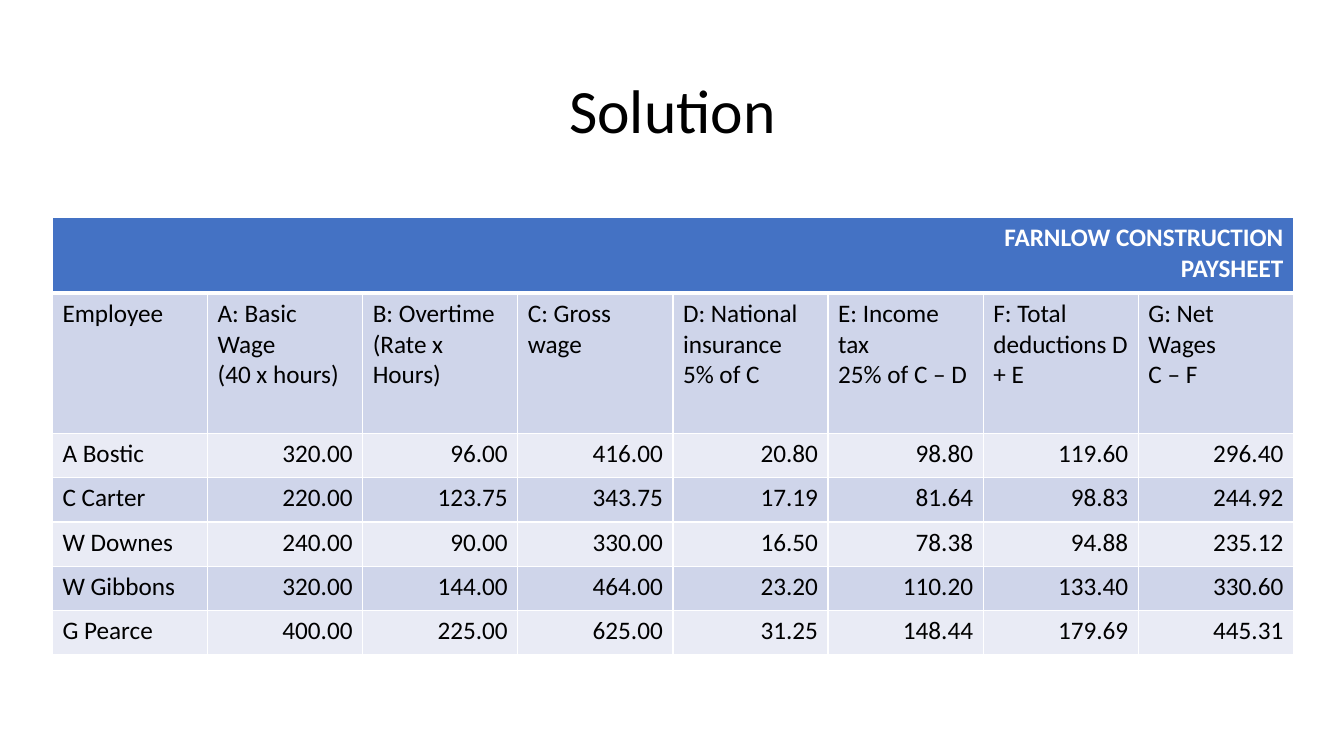
from pptx import Presentation
from pptx.dml.color import RGBColor
from pptx.enum.text import MSO_ANCHOR, PP_ALIGN
from pptx.oxml import parse_xml
from pptx.oxml.ns import nsdecls
from pptx.util import Inches, Pt

FONT = "Calibri"
BLACK, WHITE, BLUE = "000000", "FFFFFF", "4472C4"
BANDS = ["CFD5EA", "E9EBF5"]
COLUMN_WIDTH = 12.31 / 8
ROW_HEIGHTS = [0.75, 1.39] + [0.44] * 5
COMPANY = "FARNLOW CONSTRUCTION\nPAYSHEET"
HEADINGS = [
    "Employee",
    "A: Basic Wage\n(40 x hours)",
    "B: Overtime (Rate x Hours)",
    "C: Gross wage",
    "D: National insurance 5% of C",
    "E: Income tax\n25% of C – D",
    "F: Total deductions D + E",
    "G: Net Wages\nC – F",
]
PAY = [
    ("A Bostic", 320, 96, 416, 20.80, 98.80, 119.60, 296.40),
    ("C Carter", 220, 123.75, 343.75, 17.19, 81.64, 98.83, 244.92),
    ("W Downes", 240, 90, 330, 16.50, 78.38, 94.88, 235.12),
    ("W Gibbons", 320, 144, 464, 23.20, 110.20, 133.40, 330.60),
    ("G Pearce", 400, 225, 625, 31.25, 148.44, 179.69, 445.31),
]


def color(value):
    return RGBColor.from_string(value)


def write_text(frame, text, size=18, fill=BLACK, bold=False,
               align=PP_ALIGN.LEFT, line_spacing=1.0):
    frame.text = text
    for paragraph in frame.paragraphs:
        paragraph.alignment = align
        paragraph.line_spacing = line_spacing
        for run in paragraph.runs:
            run.font.name = FONT
            run.font.size = Pt(size)
            run.font.bold = bold
            run.font.color.rgb = color(fill)


def set_borders(cell, bottom=1):
    properties = cell._tc.get_or_add_tcPr()
    widths = {"lnL": 1, "lnR": 1, "lnT": 1, "lnB": bottom}
    for position, (side, width) in enumerate(widths.items()):
        properties.insert(position, parse_xml(
            f'<a:{side} {nsdecls("a")} w="{Pt(width)}"><a:solidFill>'
            f'<a:srgbClr val="{WHITE}"/></a:solidFill></a:{side}>'))


def fill_cell(cell, text, background, bottom=1, **text_format):
    cell.fill.solid()
    cell.fill.fore_color.rgb = color(background)
    set_borders(cell, bottom)
    write_text(cell.text_frame, text, **text_format)


def add_title(slide, text):
    title = slide.shapes.title
    title.left, title.top = Inches(0.92), Inches(0.4)
    title.width, title.height = Inches(11.5), Inches(1.45)
    title.text_frame.vertical_anchor = MSO_ANCHOR.MIDDLE
    write_text(title.text_frame, text, size=44, align=PP_ALIGN.CENTER,
               line_spacing=0.9)


def add_paysheet(slide):
    table = slide.shapes.add_table(
        len(ROW_HEIGHTS), len(HEADINGS), Inches(0.52), Inches(2.16),
        Inches(COLUMN_WIDTH * len(HEADINGS)), Inches(sum(ROW_HEIGHTS))).table
    for column in table.columns:
        column.width = Inches(COLUMN_WIDTH)
    for row, height in zip(table.rows, ROW_HEIGHTS):
        row.height = Inches(height)

    for column in range(len(HEADINGS)):
        fill_cell(table.cell(0, column), "" if column else COMPANY, BLUE,
                  bottom=3, fill=WHITE, bold=True, align=PP_ALIGN.RIGHT)
    table.cell(0, 0).merge(table.cell(0, len(HEADINGS) - 1))

    for row, values in enumerate([HEADINGS] + PAY):
        for column, value in enumerate(values):
            is_text = isinstance(value, str)
            fill_cell(table.cell(row + 1, column),
                      value if is_text else f"{value:.2f}", BANDS[row % 2],
                      align=PP_ALIGN.LEFT if is_text else PP_ALIGN.RIGHT)


def main():
    presentation = Presentation()
    presentation.slide_width = Inches(13.33)
    presentation.slide_height = Inches(7.5)
    slide = presentation.slides.add_slide(presentation.slide_layouts[5])
    add_title(slide, "Solution")
    add_paysheet(slide)
    presentation.save("out.pptx")


if __name__ == "__main__":
    main()
